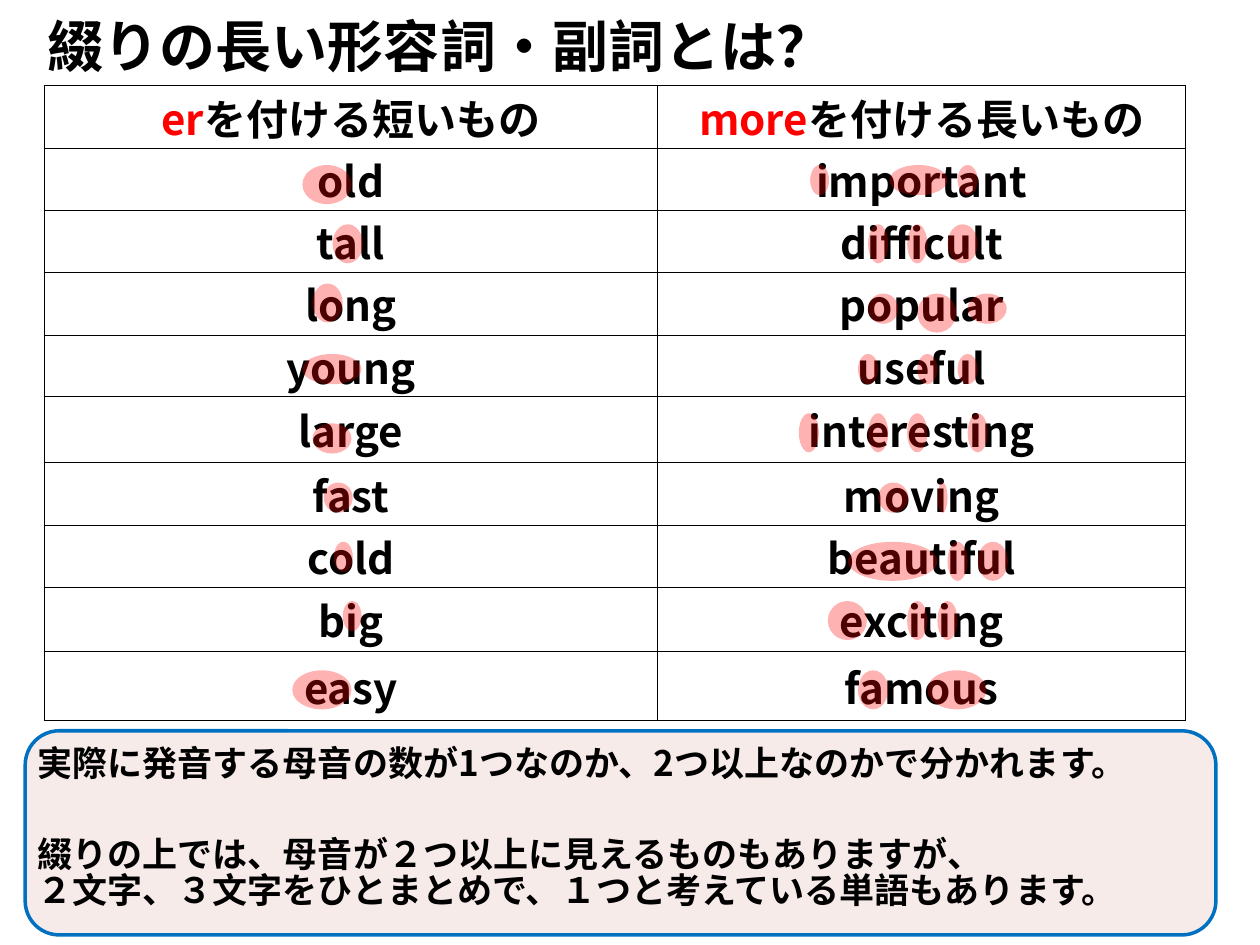
from lxml.etree import SubElement
from pptx import Presentation
from pptx.dml.color import RGBColor
from pptx.enum.shapes import MSO_SHAPE as Shape
from pptx.enum.text import MSO_ANCHOR as Anchor, PP_ALIGN as Align
from pptx.oxml.ns import qn
from pptx.util import Pt

PX = 9144  # EMU; 100 px to the inch
FONT = "Noto Sans CJK JP"
BLACK = RGBColor(0x00, 0x00, 0x00)
RED = RGBColor(0xFF, 0x00, 0x00)
BLUE = RGBColor(0x00, 0x70, 0xC0)
ROSE = RGBColor(0xD9, 0x96, 0x94)

COLUMN_WIDTHS = [487, 419]
ROW_HEIGHTS = [50, 49, 49, 50, 49, 52, 50, 49, 51, 55]
HEADINGS = [("er", "を付ける短いもの"), ("more", "を付ける長いもの")]

# Each word: text, top of its vowel marks in the table, and for each mark
# its left in the column, width and height.
SHORT_WORDS = [
    ("old", 63, [(205, 39, 31)]),
    ("tall", 110, [(229, 24, 31)]),
    ("long", 157, [(213, 24, 31)]),
    ("young", 213, [(205, 47, 24)]),
    ("large", 268, [(213, 31, 24)]),
    ("fast", 315, [(222, 23, 24)]),
    ("cold", 362, [(230, 15, 24)]),
    ("big", 409, [(237, 15, 24)]),
    ("easy", 464, [(197, 47, 31)]),
]
LONG_WORDS = [
    ("important", 63, [(121, 15, 24), (184, 46, 24), (238, 16, 24)]),
    ("difficult", 110, [(167, 16, 31), (198, 16, 31), (230, 24, 31)]),
    ("popular", 165, [(167, 24, 24), (206, 31, 31), (246, 31, 24)]),
    ("useful", 213, [(159, 16, 24), (206, 16, 24), (238, 16, 24)]),
    ("interesting", 260,
     [(112, 16, 31), (167, 16, 31), (198, 16, 31), (246, 16, 31)]),
    ("moving", 315, [(175, 24, 24), (222, 8, 24)]),
    ("beautiful", 362, [(151, 71, 31), (230, 16, 31), (254, 24, 31)]),
    ("exciting", 409, [(135, 31, 31), (198, 16, 31), (222, 16, 31)]),
    ("famous", 464, [(159, 24, 31), (214, 47, 31)]),
]
NOTES = [
    (8, 44, ["実際に発音する母音の数が1つなのか、2つ以上なのかで分かれます。"]),
    (80, 77, ["綴りの上では、母音が２つ以上に見えるものもありますが、",
              "２文字、３文字をひとまとめで、１つと考えている単語もあります。"]),
]


def emu(*lengths):
    return [length * PX for length in lengths]


def format_span(span, size, color=BLACK):
    font = span.font
    font.size, font.bold, font.name = Pt(size), True, FONT
    font.color.rgb = color
    SubElement(font._element, qn("a:ea"), typeface=FONT)


def add_tinted_shape(page, kind, box, color, opacity):
    shape = page.shapes.add_shape(kind, *emu(*box))
    shape.shadow.inherit = False
    shape.fill.solid()
    shape.fill.fore_color.rgb = color
    shape.line.fill.background()
    tint = shape.fill._xPr.find(qn("a:solidFill"))[0]
    SubElement(tint, qn("a:alpha"), val=str(opacity * 1000))
    return shape


def add_title(page, box):
    title = page.shapes.title
    title.left, title.top, title.width, title.height = emu(*box)
    frame = title.text_frame
    frame.text = "綴りの長い形容詞・副詞とは？"
    frame.word_wrap = False
    frame.margin_top = frame.margin_bottom = 0
    frame.vertical_anchor = Anchor.MIDDLE
    para = frame.paragraphs[0]
    para.alignment = Align.LEFT
    format_span(para.runs[0], 32)


def fill_cell(cell, spans):
    """Write (text, colour) spans into a plain cell with thin black borders."""
    cell.margin_left = cell.margin_right = 0
    cell.margin_top = cell.margin_bottom = 0
    cell.vertical_anchor = Anchor.MIDDLE
    properties = cell._tc.get_or_add_tcPr()
    for side in ("lnL", "lnR", "lnT", "lnB"):
        border = SubElement(properties, qn("a:" + side), w=str(Pt(0.5)))
        solid = SubElement(border, qn("a:solidFill"))
        SubElement(solid, qn("a:srgbClr"), val=str(BLACK))
    cell.fill.background()
    para = cell.text_frame.paragraphs[0]
    para.alignment = Align.CENTER
    for text, color in spans:
        span = para.add_run()
        span.text = text
        format_span(span, 24, color)


def add_word_table(page, box):
    frame = page.shapes.add_table(len(ROW_HEIGHTS), len(COLUMN_WIDTHS), *emu(*box))
    table = frame.table
    table.first_row = table.horz_banding = False
    for row, height in zip(table.rows, ROW_HEIGHTS):
        row.height = height * PX
    for index, words in enumerate([SHORT_WORDS, LONG_WORDS]):
        table.columns[index].width = COLUMN_WIDTHS[index] * PX
        ending, rest = HEADINGS[index]
        fill_cell(table.cell(0, index), [(ending, RED), (rest, BLACK)])
        for row, (word, _, _) in enumerate(words, 1):
            fill_cell(table.cell(row, index), [(word, BLACK)])


def add_vowel_marks(page, box):
    left, top = box[:2]
    for words, width in zip([SHORT_WORDS, LONG_WORDS], COLUMN_WIDTHS):
        for _, mark_top, marks in words:
            for mark_left, mark_width, mark_height in marks:
                mark_box = (left + mark_left, top + mark_top, mark_width, mark_height)
                add_tinted_shape(page, Shape.OVAL, mark_box, RED, 30)
        left += width


def add_notes_panel(page, box):
    left, top = box[:2]
    panel = add_tinted_shape(page, Shape.ROUNDED_RECTANGLE, box, ROSE, 19)
    panel.line.color.rgb = BLUE
    panel.line.width = Pt(2)
    for offset, height, lines in NOTES:
        note = page.shapes.add_textbox(*emu(left, top + offset, 913, height))
        frame = note.text_frame
        frame.word_wrap = True
        frame.text = "\n".join(lines)
        for para in frame.paragraphs:
            para.line_spacing = 0.87
            format_span(para.runs[0], 20)


def main():
    deck = Presentation()
    deck.slide_width, deck.slide_height = emu(1000, 750)
    page = deck.slides.add_slide(deck.slide_layouts[5])
    table_box = (35, 68, sum(COLUMN_WIDTHS), sum(ROW_HEIGHTS))
    add_title(page, (28, 4, 795, 64))
    add_word_table(page, table_box)
    add_notes_panel(page, (20, 580, 945, 162))
    add_vowel_marks(page, table_box)
    deck.save("out.pptx")


if __name__ == "__main__":
    main()
